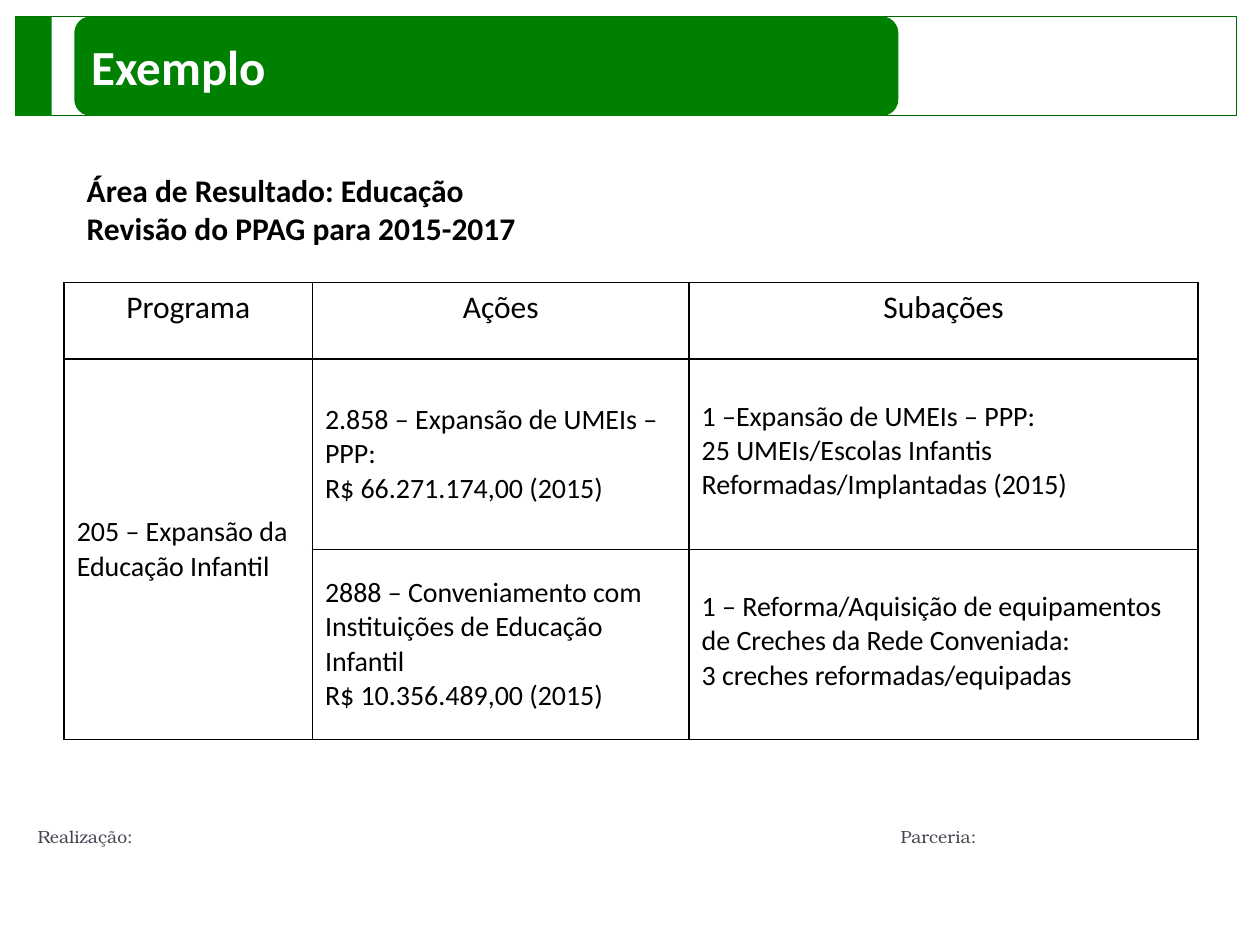
from lxml import etree
from pptx import Presentation
from pptx.dml.color import RGBColor
from pptx.enum.shapes import MSO_SHAPE
from pptx.enum.text import MSO_ANCHOR, PP_ALIGN
from pptx.oxml.ns import qn
from pptx.util import Inches, Pt

RECTANGLE, ROUNDED = MSO_SHAPE.RECTANGLE, MSO_SHAPE.ROUNDED_RECTANGLE
TOP, MIDDLE = MSO_ANCHOR.TOP, MSO_ANCHOR.MIDDLE
LEFT, CENTER = PP_ALIGN.LEFT, PP_ALIGN.CENTER

THEME = {
    "green": "008000", "frame": "006600", "text": "000000",
    "white": "FFFFFF", "footer": "464653",
    "font": "Calibri", "footer_font": "TeX Gyre Bonum",
    "title_size": 28, "heading_size": 18, "body_size": 16, "footer_size": 10,
}

presentation = Presentation()
presentation.slide_width, presentation.slide_height = Inches(10), Inches(7.5)
slide = presentation.slides.add_slide(presentation.slide_layouts[6])
COLUMN = presentation.slide_width / 100
ROW = presentation.slide_height / 75


def grid(left, top, width, height):
    """Turn columns and rows of the 100 by 75 slide grid into lengths."""
    return int(left * COLUMN), int(top * ROW), int(width * COLUMN), int(height * ROW)


def write(text_frame, text, size, color="text", font="font", bold=False, align=LEFT):
    """Set the text, one paragraph a line, and format every run."""
    text_frame.word_wrap = True
    text_frame.text = text
    for paragraph in text_frame.paragraphs:
        paragraph.alignment = align
        for run in paragraph.runs:
            run.font.name = THEME[font]
            run.font.size = Pt(THEME[size])
            run.font.bold = bold
            run.font.color.rgb = RGBColor.from_string(THEME[color])


# Header band: frame, side block and title bar
BAND_TOP, BAND_HEIGHT = 1.3, 7.9
for kind, left, width, fill, line in [
    (RECTANGLE, 1.2, 96.9, None, "frame"),
    (RECTANGLE, 1.2, 2.9, "green", None),
    (ROUNDED, 5.9, 65.4, "green", None),
]:
    shape = slide.shapes.add_shape(kind, *grid(left, BAND_TOP, width, BAND_HEIGHT))
    shape.shadow.inherit = False
    if fill:
        shape.fill.solid()
        shape.fill.fore_color.rgb = RGBColor.from_string(THEME[fill])
    else:
        shape.fill.background()
    if line:
        shape.line.color.rgb = RGBColor.from_string(THEME[line])
        shape.line.width = Pt(0.5)
    else:
        shape.line.fill.background()
title_bar = shape
title_bar.text_frame.vertical_anchor = MIDDLE
write(title_bar.text_frame, "Exemplo", "title_size", "white", bold=True)

# Subject of the example
subject = slide.shapes.add_textbox(*grid(5.9, 13.1, 40, 7.1))
write(subject.text_frame,
      "Área de Resultado: Educação\nRevisão do PPAG para 2015-2017",
      "heading_size", bold=True)

# Programme table
column_widths = [19.7, 29.9, 40.4]
row_heights = [6.1, 15.1, 15.1]
contents = [
    ["Programa", "Ações", "Subações"],
    ["205 – Expansão da Educação Infantil",
     "2.858 – Expansão de UMEIs – PPP:\nR$ 66.271.174,00 (2015)",
     "1 –Expansão de UMEIs – PPP:\n25 UMEIs/Escolas Infantis Reformadas/Implantadas (2015)"],
    ["",
     "2888 – Conveniamento com Instituições de Educação Infantil\nR$ 10.356.489,00 (2015)",
     "1 – Reforma/Aquisição de equipamentos de Creches da Rede Conveniada:\n"
     "3 creches reformadas/equipadas"],
]
table = slide.shapes.add_table(
    len(row_heights), len(column_widths),
    *grid(5.1, 22.4, sum(column_widths), sum(row_heights))).table
for column, width in zip(table.columns, column_widths):
    column.width = int(width * COLUMN)
for row, height in zip(table.rows, row_heights):
    row.height = int(height * ROW)
table.cell(1, 0).merge(table.cell(2, 0))

for row_index, texts in enumerate(contents):
    is_header = row_index == 0
    for column_index, text in enumerate(texts):
        cell = table.cell(row_index, column_index)
        cell.vertical_anchor = TOP if is_header else MIDDLE
        if column_index == 2 and not is_header:
            cell.margin_bottom = Inches(0.1)
        if text:
            write(cell.text_frame, text,
                  "heading_size" if is_header else "body_size",
                  align=CENTER if is_header else LEFT)
        properties = cell._tc.get_or_add_tcPr()
        for side in ("lnL", "lnR", "lnT", "lnB"):
            border = etree.SubElement(properties, qn(f"a:{side}"), w=str(Pt(1)))
            solid = etree.SubElement(border, qn("a:solidFill"))
            etree.SubElement(solid, qn("a:srgbClr"), val=THEME["text"])
        cell.fill.background()

# Footer: both labels on one line, the second at a tab stop
footer = slide.shapes.add_textbox(*grid(2, 65.1, 95.5, 3.1))
write(footer.text_frame, "Realização:\tParceria:", "footer_size", "footer", "footer_font")
tab_list = etree.SubElement(
    footer.text_frame.paragraphs[0]._p.get_or_add_pPr(), qn("a:tabLst"))
etree.SubElement(tab_list, qn("a:tab"), pos=str(int(68.5 * COLUMN)), algn="l")

presentation.save("out.pptx")
